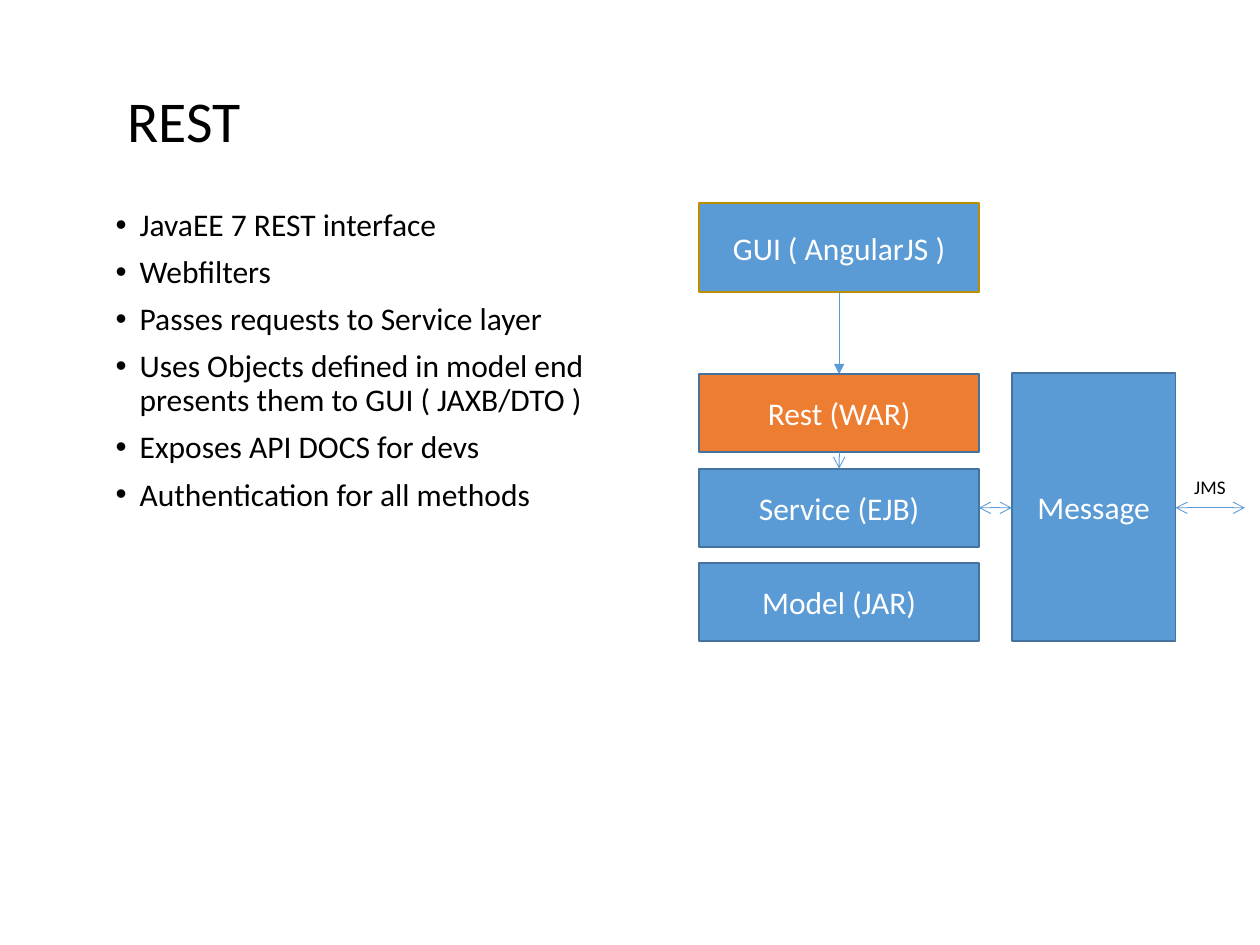
import pptx
import pptx.util
import pptx.dml.color
import pptx.enum.shapes
import pptx.enum.text
import pptx.oxml.ns
from lxml import etree

INCH = pptx.util.Inches
PT = pptx.util.Pt
ALIGN = pptx.enum.text.PP_ALIGN
ANCHOR = pptx.enum.text.MSO_ANCHOR
QN = pptx.oxml.ns.qn

BLUE, ORANGE, EDGE, GOLD = "5B9BD5", "ED7D31", "43739E", "BD8E00"
WHITE, BLACK = "FFFFFF", "000000"

# Layer stack: one column of equal boxes with an equal step
LEFT, WIDTH, HIGH = 5.55, 2.22, 0.62
TOP, STEP = 2.97, 0.75
RIGHT, MID = LEFT + WIDTH, LEFT + WIDTH / 2
LAYERS = [("Rest (WAR)", ORANGE), ("Service (EJB)", BLUE), ("Model (JAR)", BLUE)]
GUI_TOP, GUI_HIGH = 1.61, 0.71
MSG_LEFT, MSG_WIDTH = 8.03, 1.3

POINTS = [
    "JavaEE 7 REST interface",
    "Webfilters",
    "Passes requests to Service layer",
    "Uses Objects defined in model end presents them to GUI ( JAXB/DTO )",
    "Exposes API DOCS for devs",
    "Authentication for all methods",
]


def color(value):
    return pptx.dml.color.RGBColor.from_string(value)


def place(shape, left, top, width, height):
    shape.left, shape.top = INCH(left), INCH(top)
    shape.width, shape.height = INCH(width), INCH(height)


def write(para, text, size, hue, align=ALIGN.LEFT):
    para.alignment = align
    run = para.add_run()
    run.text = text
    run.font.name = "Calibri"
    run.font.size = PT(size)
    run.font.color.rgb = color(hue)


def add_title(slide, text):
    title = slide.shapes.title
    place(title, 0.91, 0.36, 6.55, 1.25)
    title.text_frame.vertical_anchor = ANCHOR.MIDDLE
    para = title.text_frame.paragraphs[0]
    para.line_spacing = 0.9
    write(para, text, 33, BLACK)


def add_text(slide, left, top, width, height, wrap):
    box = slide.shapes.add_textbox(INCH(left), INCH(top), INCH(width), INCH(height))
    box.text_frame.word_wrap = wrap
    return box.text_frame


def add_list(slide, items):
    frame = add_text(slide, 0.82, 1.61, 4.26, 4.16, True)
    for i, item in enumerate(items):
        para = frame.add_paragraph() if i else frame.paragraphs[0]
        para.line_spacing = 0.9
        para.space_before = PT(7.5)
        write(para, item, 18, BLACK)
        props = para._p.get_or_add_pPr()
        props.set("marL", str(INCH(0.19)))
        props.set("indent", str(-INCH(0.19)))
        etree.SubElement(props, QN("a:buFont"), typeface="Arial")
        etree.SubElement(props, QN("a:buChar"), char="•")


def add_box(slide, text, left, top, width, height, fill=BLUE, edge=EDGE):
    kind = pptx.enum.shapes.MSO_SHAPE.RECTANGLE
    box = slide.shapes.add_shape(kind, INCH(left), INCH(top), INCH(width), INCH(height))
    box.shadow.inherit = False
    box.fill.solid()
    box.fill.fore_color.rgb = color(fill)
    box.line.color.rgb = color(edge)
    box.line.width = PT(1)
    box.text_frame.word_wrap = True
    box.text_frame.vertical_anchor = ANCHOR.MIDDLE
    write(box.text_frame.paragraphs[0], text, 18, WHITE, ALIGN.CENTER)


def add_arrow(slide, start, end, tip="arrow", both=False):
    kind = pptx.enum.shapes.MSO_CONNECTOR.STRAIGHT
    link = slide.shapes.add_connector(kind, *map(INCH, start + end))
    link.line.color.rgb = color(BLUE)
    link.line.width = PT(0.5)
    line = link.line._get_or_add_ln()
    if both:
        etree.SubElement(line, QN("a:headEnd"), type=tip)
    etree.SubElement(line, QN("a:tailEnd"), type=tip)
    etree.SubElement(link._element.spPr, QN("a:effectLst"))


def main():
    deck = pptx.Presentation()
    deck.slide_width, deck.slide_height = INCH(10), INCH(7.5)
    slide = deck.slides.add_slide(deck.slide_layouts[5])

    add_title(slide, "REST")
    add_list(slide, POINTS)

    add_box(slide, "GUI ( AngularJS )", LEFT, GUI_TOP, WIDTH, GUI_HIGH, edge=GOLD)
    add_arrow(slide, (MID, GUI_TOP + GUI_HIGH), (MID, TOP), "triangle")
    for row, (name, fill) in enumerate(LAYERS):
        add_box(slide, name, LEFT, TOP + row * STEP, WIDTH, HIGH, fill)
    add_box(slide, "Message", MSG_LEFT, TOP - 0.01, MSG_WIDTH, 2 * STEP + HIGH + 0.01)

    add_arrow(slide, (MID, TOP + HIGH), (MID, TOP + STEP))
    axis = TOP + STEP + HIGH / 2
    edge = MSG_LEFT + MSG_WIDTH
    add_arrow(slide, (RIGHT, axis), (MSG_LEFT, axis), both=True)
    add_arrow(slide, (edge, axis), (9.88, axis), both=True)
    label = add_text(slide, 9.38, TOP + STEP, 0.47, 0.29, False)
    write(label.paragraphs[0], "JMS", 11, BLACK)

    deck.save("out.pptx")


if __name__ == "__main__":
    main()
